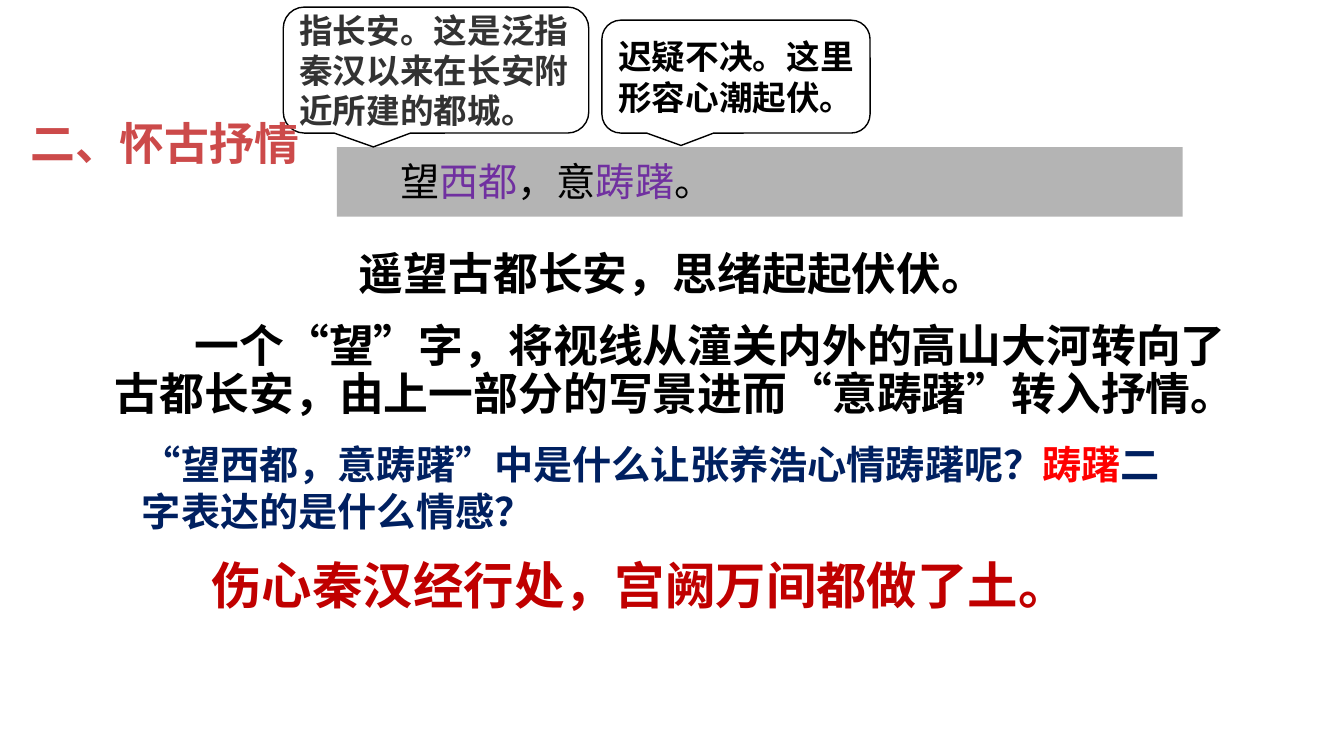
from dataclasses import dataclass
from lxml import etree
from pptx import Presentation
from pptx.dml.color import RGBColor
from pptx.enum.shapes import MSO_SHAPE
from pptx.enum.text import MSO_ANCHOR, MSO_AUTO_SIZE, PP_ALIGN
from pptx.oxml.ns import qn
from pptx.util import Pt

PX = 9144
RECT = MSO_SHAPE.RECTANGLE
BUBBLE = MSO_SHAPE.ROUNDED_RECTANGULAR_CALLOUT
TOP, MIDDLE = MSO_ANCHOR.TOP, MSO_ANCHOR.MIDDLE
LEFT, CENTER = PP_ALIGN.LEFT, PP_ALIGN.CENTER
FIXED = MSO_AUTO_SIZE.NONE


@dataclass(frozen=True)
class Theme:
    black: str = "000000"
    white: str = "FFFFFF"
    bar: str = "B4B4B4"
    gray: str = "333333"
    purple: str = "7030A0"
    navy: str = "002060"
    red: str = "FF0000"
    deep: str = "C00000"
    rose: str = "CC4A4A"
    note: int = 24
    verse: int = 28
    text: int = 32
    quote: int = 36
    cjk: str = "Noto Sans CJK SC"
    sans: str = "Arial"
    plain: str = "Calibri"
    serif: str = "Times New Roman"


T = Theme()


def emu(box):
    return [n * PX for n in box]


def place(shape, box):
    shape.left, shape.top, shape.width, shape.height = emu(box)


def write(shape, *parts, size=T.text, font=T.cjk, color=T.black, bold=True,
          align=LEFT, anchor=TOP, wrap=True, space=1.0, margin=0, indent=0):
    frame = shape.text_frame
    frame.word_wrap = wrap
    frame.auto_size = FIXED
    frame.vertical_anchor = anchor
    para = frame.paragraphs[0]
    props = para._p.get_or_add_pPr()
    props.set("marL", str(margin * PX))
    props.set("indent", str(indent * PX))
    etree.SubElement(props, qn("a:buNone"))
    para.alignment = align
    para.line_spacing = space
    para.space_before = Pt(0)
    for part in parts:
        words, tint = part if isinstance(part, tuple) else (part, color)
        run = para.add_run()
        run.text = words
        run.font.size = Pt(size)
        run.font.name = font
        run.font.bold = bold
        run.font.color.rgb = RGBColor.from_string(tint)
        east = etree.SubElement(run._r.get_or_add_rPr(), qn("a:ea"))
        east.set("typeface", T.cjk)


def label(shapes, box, *parts, **style):
    write(shapes.add_textbox(*emu(box)), *parts, **style)


def panel(shapes, kind, box, fill):
    shape = shapes.add_shape(kind, *emu(box))
    shape.shadow.inherit = False
    shape.fill.solid()
    shape.fill.fore_color.rgb = RGBColor.from_string(fill)
    shape.line.fill.background()
    return shape


def banner(slide, box):
    x, y, w, h = box
    shapes = slide.shapes.add_group_shape().shapes
    panel(shapes, RECT, box, T.bar)
    label(shapes, (x + 53, y + 5, 345, 57),
          "望", ("西都", T.purple), "，意", ("踌躇", T.purple), "。",
          size=T.verse, font=T.sans, bold=False, wrap=False)


def bubble(slide, box, words, **style):
    shape = panel(slide.shapes, BUBBLE, box, T.white)
    for i, value in enumerate((-0.205, 0.61, 0.167)):
        shape.adjustments[i] = value
    shape.line.color.rgb = RGBColor.from_string(T.black)
    shape.line.width = Pt(1)
    write(shape, words, size=T.note, anchor=MIDDLE, **style)


def reading(slide, box):
    x, y, w, h = box
    label(slide.shapes, (x + 267, y, 803, 75),
          "遥望古都长安，思绪起起伏伏。", space=1.2)
    body = slide.placeholders[1]
    place(body, (x, y + 88, w, 157))
    write(body, "一个“望”字，将视线从潼关内外的高山大河转向了"
          "古都长安，由上一部分的写景进而“意踌躇”转入抒情。",
          space=0.9, margin=25, indent=79)


def question(slide, box):
    x, y, w, h = box
    label(slide.shapes, (x, y, w, 104),
          "“望西都，意踌躇”中是什么让张养浩心情踌躇呢？",
          ("踌躇", T.red), "二字表达的是什么情感？",
          size=T.verse, font=T.plain, color=T.navy)
    label(slide.shapes, (x + 69, y + 113, 867, 102),
          "伤心秦汉经行处，宫阙万间都做了土。",
          size=T.quote, font=T.plain, color=T.deep)


def heading(slide, box):
    title = slide.shapes.title
    place(title, box)
    write(title, "二、怀古抒情", font=T.serif, color=T.rose)
    slide.shapes._spTree.append(title._element)


def main():
    deck = Presentation()
    deck.slide_width, deck.slide_height = emu((1333, 750))
    slide = deck.slides.add_slide(deck.slide_layouts[1])
    banner(slide, (334, 146, 839, 69))
    reading(slide, (79, 228, 1161, 245))
    bubble(slide, (597, 20, 266, 112), "迟疑不决。这里形容心潮起伏。",
           align=CENTER)
    bubble(slide, (281, 7, 303, 125),
           "指长安。这是泛指秦汉以来在长安附近所建的都城。", color=T.gray)
    question(slide, (131, 432, 1056, 215))
    heading(slide, (20, 110, 315, 64))
    deck.save("out.pptx")


if __name__ == "__main__":
    main()
